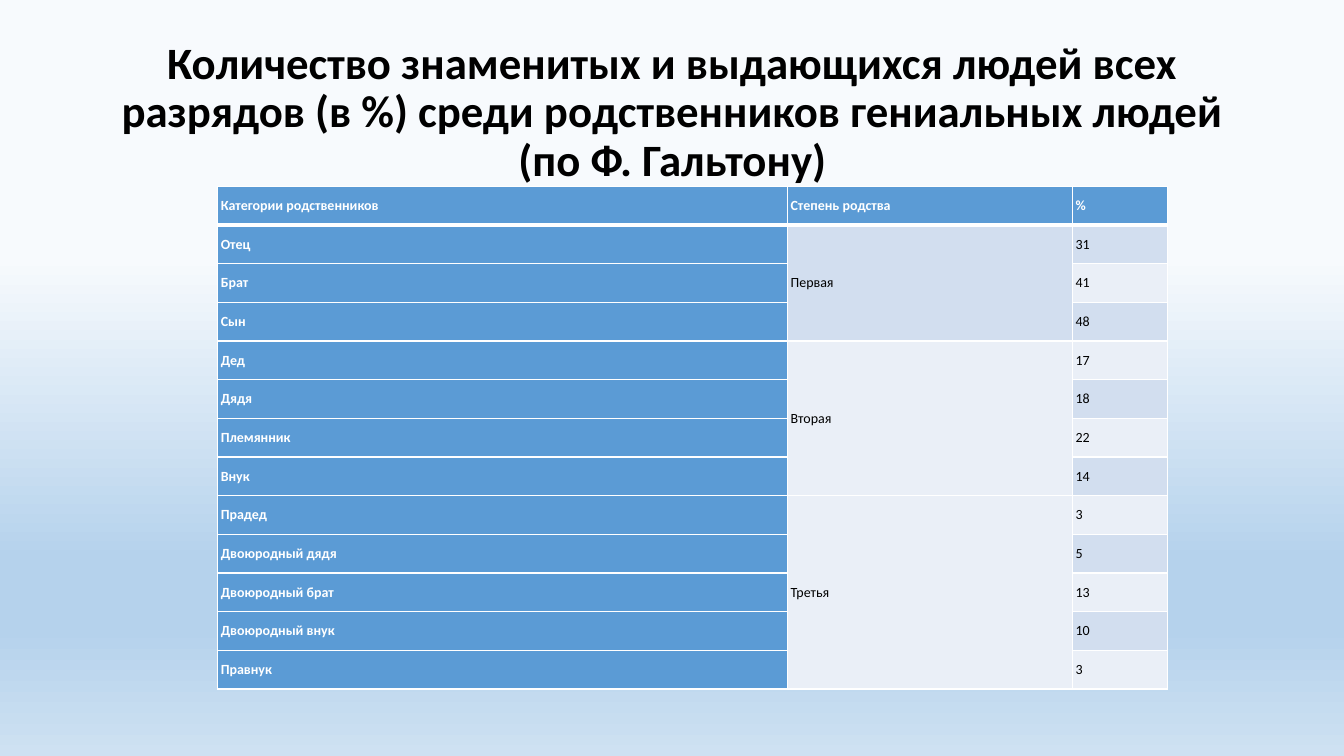
from lxml.etree import SubElement
from pptx import Presentation
from pptx.dml.color import RGBColor
from pptx.enum.text import MSO_ANCHOR, MSO_AUTO_SIZE, PP_ALIGN
from pptx.oxml.ns import qn
from pptx.util import Inches, Pt

# Content
TITLE = ("Количество знаменитых и выдающихся людей всех разрядов (в %) "
         "среди родственников гениальных людей (по Ф. Гальтону)")
HEADER = ("Категории родственников", "Степень родства", "%")
KINSHIP = {
    "Первая": [("Отец", 31), ("Брат", 41), ("Сын", 48)],
    "Вторая": [("Дед", 17), ("Дядя", 18), ("Племянник", 22), ("Внук", 14)],
    "Третья": [("Прадед", 3), ("Двоюродный дядя", 5), ("Двоюродный брат", 13),
               ("Двоюродный внук", 10), ("Правнук", 3)],
}


class Theme:
    font = "Calibri"
    title_size, cell_size = 32, 10
    dark, light, accent = "000000", "FFFFFF", "5B9BD5"
    bands = ("EAEFF7", "D2DEEF")
    background = ((34, "F7FAFD"), (74, "B5D2EC"), (83, "B5D2EC"), (100, "CEE1F2"))
    thin, thick = 1, 3


# Layout in inches
PAGE_WIDTH, PAGE_HEIGHT = 13.33, 7.5
TITLE_BOX = {"left": 0.92, "top": 0.4, "width": 11.5, "height": 1.45}
TABLE_BOX = {"left": 2.16, "top": 1.85, "width": 9.42, "height": 4.99}
COLUMN_SHARES = (0.6, 0.3, 0.1)
CELL_MARGIN = 0.03


def assign(target, values):
    for name, value in values.items():
        setattr(target, name, value)


def style_font(font, size, color, bold):
    assign(font, {"name": Theme.font, "size": Pt(size), "bold": bold})
    font.color.rgb = RGBColor.from_string(color)


def paint_background(page):
    fill = page.background.fill
    fill.gradient()
    fill.gradient_angle = 270  # counter-clockwise: runs from top to bottom
    stops = next(page.background._cSld.iter(qn("a:gsLst")))
    for stop in list(stops):
        stops.remove(stop)
    for percent, color in Theme.background:
        stop = SubElement(stops, qn("a:gs"), pos=str(percent * 1000))
        SubElement(stop, qn("a:srgbClr"), val=color)


def draw_borders(cell, top, bottom):
    properties = cell._tc.get_or_add_tcPr()
    widths = {"L": Theme.thin, "R": Theme.thin, "T": top, "B": bottom}
    for side, width in widths.items():
        line = SubElement(properties, qn(f"a:ln{side}"), w=str(Pt(width)))
        SubElement(SubElement(line, qn("a:solidFill")), qn("a:srgbClr"), val=Theme.light)


def format_cell(cell, row, column):
    is_heading = row == 0 or column == 0
    assign(cell, {f"margin_{side}": Inches(CELL_MARGIN)
                  for side in ("left", "right", "top", "bottom")})
    cell.vertical_anchor = MSO_ANCHOR.MIDDLE
    draw_borders(cell, Theme.thick if row == 1 else Theme.thin,
                 Theme.thick if row == 0 else Theme.thin)
    cell.fill.solid()
    cell.fill.fore_color.rgb = RGBColor.from_string(
        Theme.accent if is_heading else Theme.bands[row % 2])
    style_font(cell.text_frame.paragraphs[0].font, Theme.cell_size,
               Theme.light if is_heading else Theme.dark, is_heading)


deck = Presentation()
assign(deck, {"slide_width": Inches(PAGE_WIDTH), "slide_height": Inches(PAGE_HEIGHT)})
page = deck.slides.add_slide(deck.slide_layouts[5])
paint_background(page)

# Title
title = page.shapes.title
assign(title, {side: Inches(length) for side, length in TITLE_BOX.items()})
assign(title.text_frame, {"text": TITLE, "word_wrap": True,
                          "auto_size": MSO_AUTO_SIZE.NONE,
                          "vertical_anchor": MSO_ANCHOR.MIDDLE})
para = title.text_frame.paragraphs[0]
assign(para, {"alignment": PP_ALIGN.CENTER, "line_spacing": 0.9})
style_font(para.runs[0].font, Theme.title_size, Theme.dark, True)

# Table: the degree is named in the first row of its group
rows = [HEADER]
for degree, relatives in KINSHIP.items():
    for index, (relative, percent) in enumerate(relatives):
        rows.append((relative, "" if index else degree, str(percent)))

table = page.shapes.add_table(
    len(rows), len(HEADER), *(Inches(length) for length in TABLE_BOX.values())).table
for column, share in zip(table.columns, COLUMN_SHARES):
    column.width = Inches(TABLE_BOX["width"] * share)
for row, values in enumerate(rows):
    for column, value in enumerate(values):
        cell = table.cell(row, column)
        cell.text = value
        format_cell(cell, row, column)

# Merge the degree column by group
first = 1
for relatives in KINSHIP.values():
    last = first + len(relatives) - 1
    table.cell(first, 1).merge(table.cell(last, 1))
    first = last + 1

deck.save("out.pptx")
